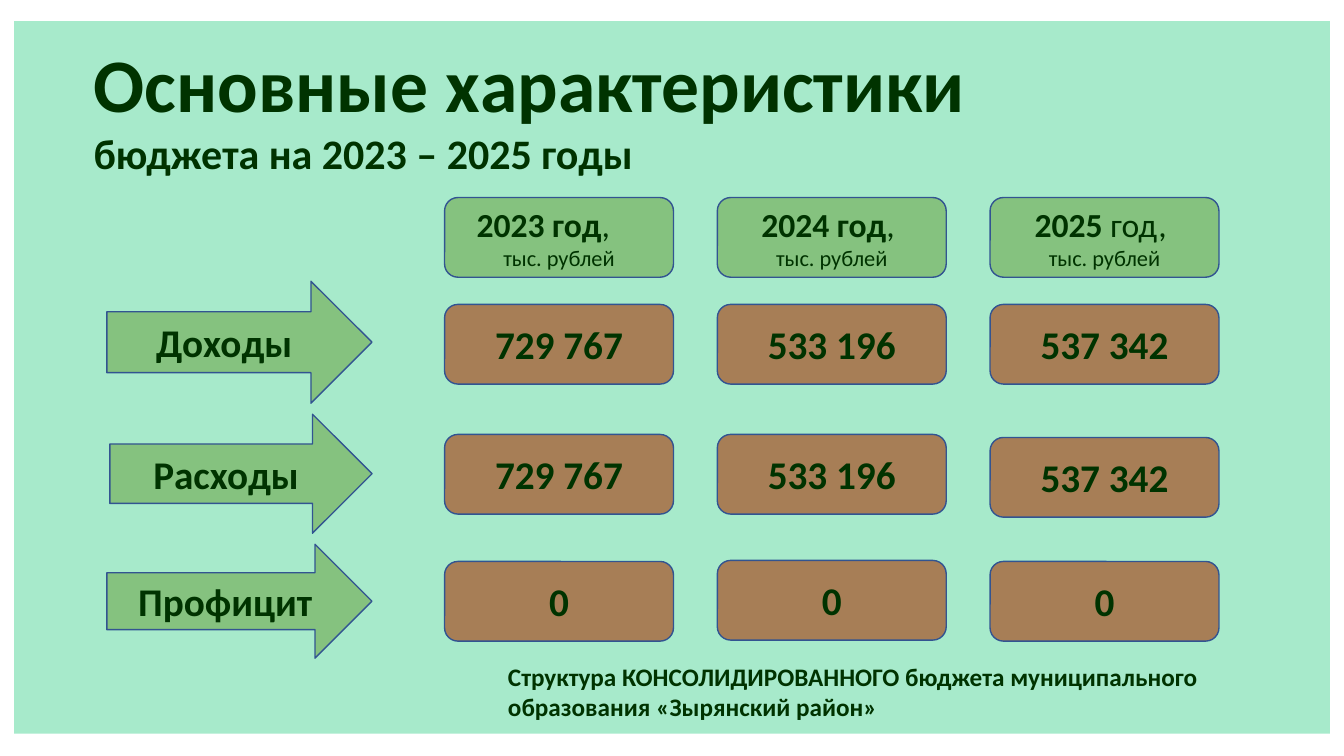
import pptx
import pptx.util
import pptx.dml.color
import pptx.enum.shapes
import pptx.enum.text

Inches = pptx.util.Inches
Pt = pptx.util.Pt
KIND = pptx.enum.shapes.MSO_SHAPE
ALIGN = pptx.enum.text.PP_ALIGN
COLORS = {"mint": "A7EACB", "green": "85C27F", "brown": "A77E56",
          "edge": "325491", "ink": "003300"}

# Column heads: bold part, plain part
YEARS = [("2023 год", ","), ("2024 год", ", "), ("2025", " год, ")]
# Rows: label, arrow box, values, cell tops
ROWS = [
    ("Доходы", (1.06, 2.79, 2.63, 1.21),
     ["729 767", "533 196", "537 342"], [3.02, 3.02, 3.02]),
    ("Расходы", (1.09, 4.11, 2.6, 1.18),
     ["729 767", "533 196", "537 342"], [4.31, 4.31, 4.34]),
    ("Профицит", (1.06, 5.4, 2.63, 1.13),
     ["0", "0", "0"], [5.57, 5.56, 5.57]),
]
LEFT, STEP, WIDE, HIGH = 4.41, 2.705, 2.27, 0.79


def color(name):
    return pptx.dml.color.RGBColor.from_string(COLORS[name])


def style(para, size, bold=True, align=ALIGN.LEFT):
    para.alignment = align
    font = para.font
    font.name, font.size = "Calibri", Pt(size)
    font.color.rgb = color("ink")
    if bold is not None:
        font.bold = bold


def add_box(slide, kind, box, fill, edge=True):
    shape = slide.shapes.add_shape(kind, *map(Inches, box))
    shape.shadow.inherit = False
    shape.fill.solid()
    shape.fill.fore_color.rgb = color(fill)
    if edge:
        shape.line.color.rgb = color("edge")
        shape.line.width = Pt(1)
    else:
        shape.line.fill.background()
    frame = shape.text_frame
    frame.word_wrap = True
    frame.vertical_anchor = pptx.enum.text.MSO_ANCHOR.MIDDLE
    return frame


def add_label(slide, kind, box, fill, text):
    para = add_box(slide, kind, box, fill).paragraphs[0]
    para.text = text
    style(para, 28, align=ALIGN.CENTER)


def add_text(slide, box, lines):
    frame = slide.shapes.add_textbox(*map(Inches, box)).text_frame
    frame.word_wrap = True
    frame.auto_size = pptx.enum.text.MSO_AUTO_SIZE.SHAPE_TO_FIT_TEXT
    for i, (text, size) in enumerate(lines):
        para = frame.add_paragraph() if i else frame.paragraphs[0]
        para.text = text
        style(para, size)


def add_head(slide, box, year, rest, first):
    frame = add_box(slide, KIND.ROUNDED_RECTANGLE, box, "green")
    para = frame.paragraphs[0]
    for text, bold in ((year, True), (rest, False)):
        run = para.add_run()
        run.text = text
        run.font.bold = bold
    style(para, 24, None, ALIGN.LEFT if first else ALIGN.CENTER)
    if first:  # the first year sits left of centre
        para._p.get_or_add_pPr().set("marL", str(Inches(0.18)))
    unit = frame.add_paragraph()
    unit.text = "тыс. рублей"
    style(unit, 16, False, ALIGN.CENTER)


def add_grid(slide, left, top):
    for col, (year, rest) in enumerate(YEARS):
        box = (left + col * STEP, top, WIDE, HIGH)
        add_head(slide, box, year, rest, col == 0)
    for label, arrow, values, tops in ROWS:
        add_label(slide, KIND.RIGHT_ARROW, arrow, "green", label)
        for col, (value, y) in enumerate(zip(values, tops)):
            box = (left + col * STEP, y, WIDE, HIGH)
            add_label(slide, KIND.ROUNDED_RECTANGLE, box, "brown", value)


def main():
    deck = pptx.Presentation()
    deck.slide_width, deck.slide_height = Inches(13.33), Inches(7.5)
    slide = deck.slides.add_slide(deck.slide_layouts[6])
    # Backdrop and title
    add_box(slide, KIND.RECTANGLE, (0.14, 0.21, 13.05, 7.07), "mint", False)
    add_text(slide, (0.83, 0.32, 11.26, 1.85),
             [("Основные характеристики", 54),
              ("бюджета на 2023 – 2025 годы", 30)])
    # Budget figures by year
    add_grid(slide, LEFT, 1.96)
    # Footer
    add_text(slide, (4.94, 6.51, 7.23, 0.71),
             [("Структура КОНСОЛИДИРОВАННОГО бюджета муниципального "
               "образования «Зырянский район»", 18)])
    deck.save("out.pptx")


if __name__ == "__main__":
    main()
